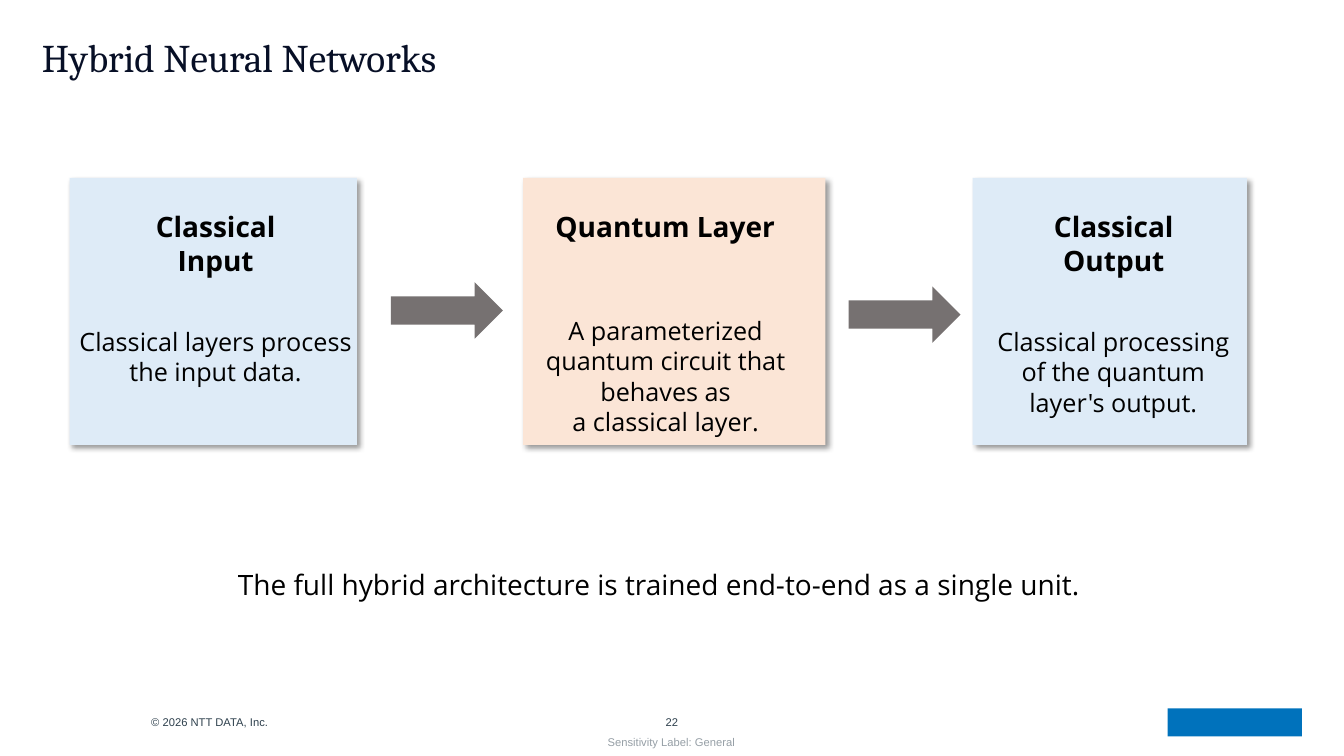
"""Build the Hybrid Neural Networks slide: three stages joined by arrows."""
from dataclasses import dataclass

from lxml.etree import SubElement
from pptx import Presentation
from pptx.dml.color import RGBColor
from pptx.enum.shapes import MSO_SHAPE
from pptx.enum.text import MSO_ANCHOR, PP_ALIGN
from pptx.oxml.ns import qn
from pptx.util import Pt


@dataclass(frozen=True)
class Theme:
    """Colours, fonts and type sizes."""
    navy: str = "070F26"
    slate: str = "2E404D"
    pale_slate: str = "969FA6"
    black: str = "000000"
    classical: str = "DEEBF7"
    quantum: str = "FBE5D6"
    arrow: str = "767171"
    brand: str = "0072BC"
    title_font: str = "Cambria"
    body_font: str = "Open Sans"
    footer_font: str = "Arial"
    title_size: int = 28
    heading_size: int = 20
    body_size: int = 18
    footer_size: int = 8


theme = Theme()
presentation = Presentation()
presentation.slide_width, presentation.slide_height = Pt(960), Pt(540)
slide = presentation.slides.add_slide(presentation.slide_layouts[5])


def write(shape, text, font, size, color, bold=False, align=PP_ALIGN.LEFT):
    """Put one formatted paragraph in a shape and return it."""
    paragraph = shape.text_frame.paragraphs[0]
    paragraph.text = text
    paragraph.alignment = align
    paragraph.font.name = font
    paragraph.font.size = Pt(size)
    paragraph.font.bold = bold
    paragraph.font.color.rgb = RGBColor.from_string(color)
    return paragraph


def add_block(kind, left, top, width, height, color):
    """Add a filled shape without outline or shadow."""
    shape = slide.shapes.add_shape(kind, Pt(left), Pt(top), Pt(width), Pt(height))
    shape.shadow.inherit = False
    shape.fill.solid()
    shape.fill.fore_color.rgb = RGBColor.from_string(color)
    shape.line.fill.background()
    return shape


title = slide.shapes.title
title.left, title.top, title.width, title.height = Pt(30), Pt(24), Pt(900), Pt(42)
title_frame = title.text_frame
title_frame.margin_left = title_frame.margin_right = 0
title_frame.vertical_anchor = MSO_ANCHOR.TOP
write(title, "Hybrid Neural Networks", theme.title_font, theme.title_size,
      theme.navy).line_spacing = 0.9

card_top, card_height, heading_top = 127, 190.8, 146.2
stages = [
    (49.7, 205.2, theme.classical, "Classical\nInput", 103.7, 100.8,
     "Classical layers process\nthe input data.", 48.2, 229.7, 211.7),
    (373.7, 216, theme.quantum, "Quantum Layer", 388.8, 172.8,
     "A parameterized\nquantum circuit that\nbehaves as\na classical layer.", 379.4, 221.8, 192.2),
    (694.8, 195.8, theme.classical, "Classical\nOutput", 745.2, 100.8,
     "Classical processing\nof the quantum\nlayer's output.", 702, 229.7, 186.5),
]
for (card_left, card_width, color, heading, heading_left, heading_width,
     body, body_left, body_top, body_width) in stages:
    card = add_block(MSO_SHAPE.RECTANGLE, card_left, card_top, card_width, card_height, color)
    effects = card.element.spPr.find(qn("a:effectLst"))
    shadow = SubElement(effects, qn("a:outerShdw"), blurRad=str(Pt(4)), dist=str(Pt(3)),
                        dir="2700000", algn="tl", rotWithShape="0")
    shadow_color = SubElement(shadow, qn("a:srgbClr"), val=theme.black)
    SubElement(shadow_color, qn("a:alpha"), val="40000")
    for text, left, top, width, size, bold in [
        (heading, heading_left, heading_top, heading_width, theme.heading_size, True),
        (body, body_left, body_top, body_width, theme.body_size, False),
    ]:
        height = 7.2 + 1.2 * size * (text.count("\n") + 1)
        label = slide.shapes.add_textbox(Pt(left), Pt(top), Pt(width), Pt(height))
        label.text_frame.word_wrap = False
        write(label, text, theme.body_font, size, theme.black, bold, PP_ALIGN.CENTER)

for arrow_left, arrow_top in [(279.2, 201.6), (606.2, 204.6)]:
    add_block(MSO_SHAPE.RIGHT_ARROW, arrow_left, arrow_top, 80, 40.3, theme.arrow)

summary = slide.shapes.add_textbox(Pt(144.7), Pt(401.8), Pt(656), Pt(64.8))
summary.text_frame.word_wrap = True
summary.text_frame.margin_left = Pt(25.2)
write(summary, "The full hybrid architecture is trained end-to-end as a single unit.",
      theme.body_font, theme.heading_size, theme.black).space_after = Pt(12)

for text, left, top, width, height, color, align in [
    ("© 2026 NTT DATA, Inc.", 108, 504, 324, 24, theme.slate, PP_ALIGN.LEFT),
    ("22", 438, 504, 84, 24, theme.slate, PP_ALIGN.CENTER),
    ("Sensitivity Label: General", 434, 525.6, 94, 9.4, theme.pale_slate, PP_ALIGN.LEFT),
]:
    footer = slide.shapes.add_textbox(Pt(left), Pt(top), Pt(width), Pt(height))
    frame = footer.text_frame
    frame.word_wrap = True
    frame.margin_left = frame.margin_right = frame.margin_top = frame.margin_bottom = 0
    frame.vertical_anchor = MSO_ANCHOR.MIDDLE
    write(footer, text, theme.footer_font, theme.footer_size, color, align=align)

add_block(MSO_SHAPE.RECTANGLE, 834, 506, 96, 20, theme.brand)

presentation.save("out.pptx")
